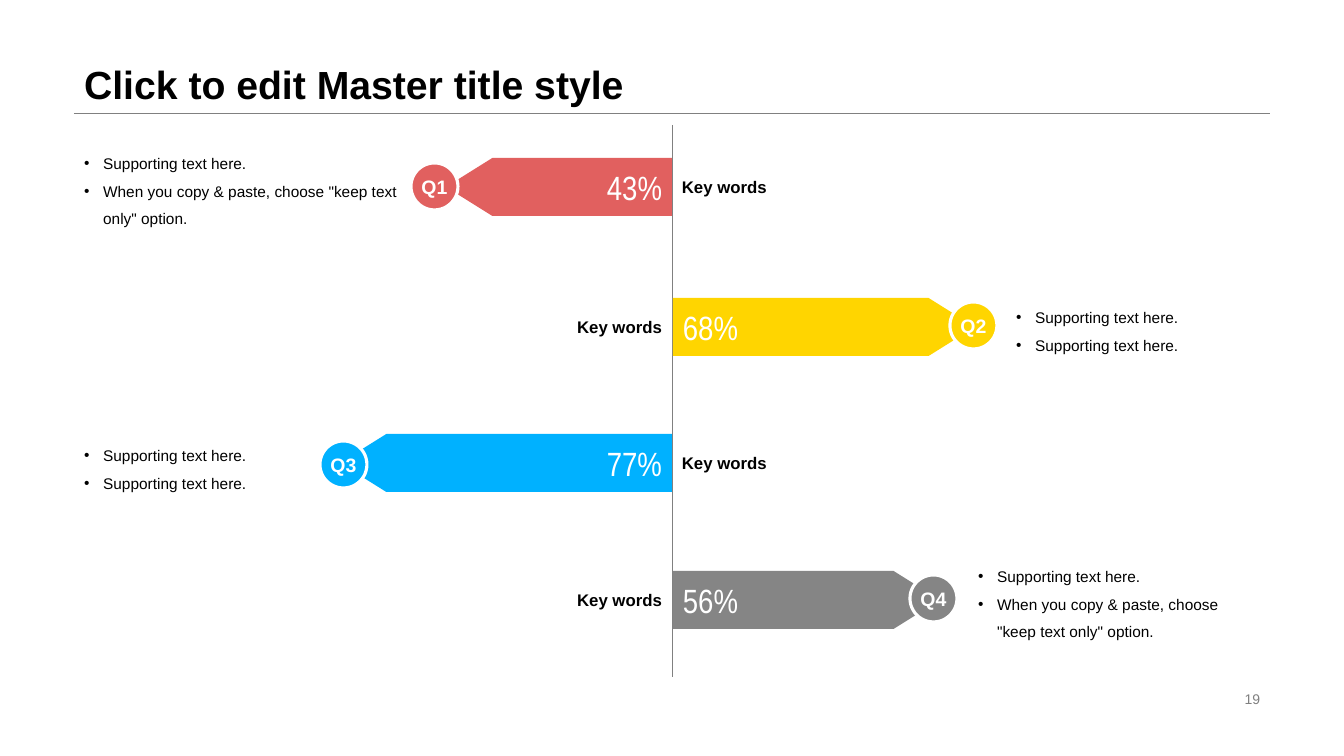
from lxml.etree import SubElement
from pptx import Presentation
from pptx.dml.color import RGBColor
from pptx.enum.shapes import MSO_CONNECTOR as CONN, MSO_SHAPE as SHAPE
from pptx.enum.text import MSO_ANCHOR as ANCHOR, MSO_AUTO_SIZE as AUTO, PP_ALIGN as ALIGN
from pptx.oxml.ns import qn
from pptx.util import Pt

TITLE = "Click to edit Master title style"
PAGE = "19"
KEY = "Key words"
SHORT = ["Supporting text here.", "Supporting text here."]
LONG = ["Supporting text here.", 'When you copy & paste, choose "keep text only" option.']
QUARTERS = [
    dict(name="Q1", value="43%", color="E1605F", side="left", top=158, length=226,
         badge=(411, 163), notes=LONG, notes_top=133, notes_width=337),
    dict(name="Q2", value="68%", color="FFD500", side="right", top=298, length=302,
         badge=(950, 302), notes=SHORT, notes_top=273, notes_width=264),
    dict(name="Q3", value="77%", color="00B1FF", side="left", top=434, length=332,
         badge=(320, 441), notes=SHORT, notes_top=411, notes_width=273),
    dict(name="Q4", value="56%", color="858585", side="right", top=571, length=267,
         badge=(910, 575), notes=LONG, notes_top=546, notes_width=302),
]
LEFT, RIGHT, AXIS = 74, 1270, 672
BAR_H, KEY_W, KEY_H, BADGE, NOTES_H, INDENT = 58, 145, 46, 47, 107, 19
BLACK, WHITE, GRAY = "000000", "FFFFFF", "808080"
SCALE = 914400 / 100.8


def px(*lengths):
    return [round(n * SCALE) for n in lengths]


def rgb(color):
    return RGBColor.from_string(color)


def write(s, lines, size, color=BLACK, bold=False, font="Arial", align=ALIGN.LEFT,
          anchor=ANCHOR.MIDDLE, wrap=False, spacing=1.0, bullets=False):
    tf = s.text_frame
    frame = dict(auto_size=AUTO.NONE, word_wrap=wrap, vertical_anchor=anchor)
    for name, value in frame.items():
        setattr(tf, name, value)
    for i, line in enumerate(lines):
        p = tf.add_paragraph() if i else tf.paragraphs[0]
        if bullets:
            pPr = p._p.get_or_add_pPr()
            indent = px(INDENT)[0]
            pPr.set("marL", str(indent))
            pPr.set("indent", str(-indent))
            SubElement(pPr, qn("a:buChar")).set("char", "•")
        for name, value in dict(alignment=align, line_spacing=spacing, space_before=Pt(0)).items():
            setattr(p, name, value)
        r = p.add_run()
        r.text = line
        for name, value in dict(size=Pt(size), bold=bold, name=font).items():
            setattr(r.font, name, value)
        r.font.color.rgb = rgb(color)


def place(s, *box):
    for name, value in zip(("left", "top", "width", "height"), px(*box)):
        setattr(s, name, value)
    return s


def add_line(*ends):
    s = shapes.add_connector(CONN.STRAIGHT, *px(*ends))
    s.line.color.rgb = rgb(GRAY)
    s.line.width = Pt(0.25)
    SubElement(s._element.spPr, qn("a:effectLst"))


def add_filled(kind, color, *box):
    s = shapes.add_shape(kind, *px(*box))
    s.shadow.inherit = False
    s.fill.solid()
    s.fill.fore_color.rgb = rgb(color)
    s.line.fill.background()
    return s


prs = Presentation()
prs.slide_width, prs.slide_height = px(1344, 756)
slide = prs.slides.add_slide(prs.slide_layouts.get_by_name("Comparison"))
shapes = slide.shapes
bodies = [s for s in slide.placeholders if s != shapes.title]

write(place(shapes.title, LEFT, 0, RIGHT - LEFT, 113), [TITLE], 28, bold=True,
      anchor=ANCHOR.BOTTOM, wrap=True, spacing=0.9)
add_line(LEFT, 113, RIGHT, 113)
add_line(AXIS, 125, AXIS, 677)
write(shapes.add_textbox(*px(950, 687, RIGHT - 950, 24)), [PAGE], 10, GRAY,
      align=ALIGN.RIGHT, wrap=True)

for q, body in zip(QUARTERS, bodies):
    on_left = q["side"] == "left"
    bar_align, key_align = (ALIGN.RIGHT, ALIGN.LEFT) if on_left else (ALIGN.LEFT, ALIGN.RIGHT)
    bar_x = AXIS - q["length"] if on_left else AXIS + 1
    key_x = AXIS if on_left else AXIS - KEY_W
    notes_x = LEFT if on_left else RIGHT - q["notes_width"]

    bar = add_filled(SHAPE.PENTAGON, q["color"], bar_x, q["top"], q["length"], BAR_H)
    bar.adjustments[0] = 0.8
    if on_left:
        bar._element.spPr.xfrm.set("flipH", "1")
    write(bar, [q["value"]], 24, WHITE, font="Arial Narrow", align=bar_align)

    key = shapes.add_textbox(*px(key_x, q["top"] + 6, KEY_W, KEY_H))
    write(key, [KEY], 12, bold=True, align=key_align)

    write(place(body, notes_x, q["notes_top"], q["notes_width"], NOTES_H), q["notes"], 11,
          wrap=True, spacing=1.5, bullets=True)

    badge = add_filled(SHAPE.OVAL, q["color"], *q["badge"], BADGE, BADGE)
    badge.line.color.rgb = rgb(WHITE)
    badge.line.width = Pt(2.25)
    write(badge, [q["name"]], 13.9, WHITE, bold=True, align=ALIGN.CENTER)

prs.save("out.pptx")
